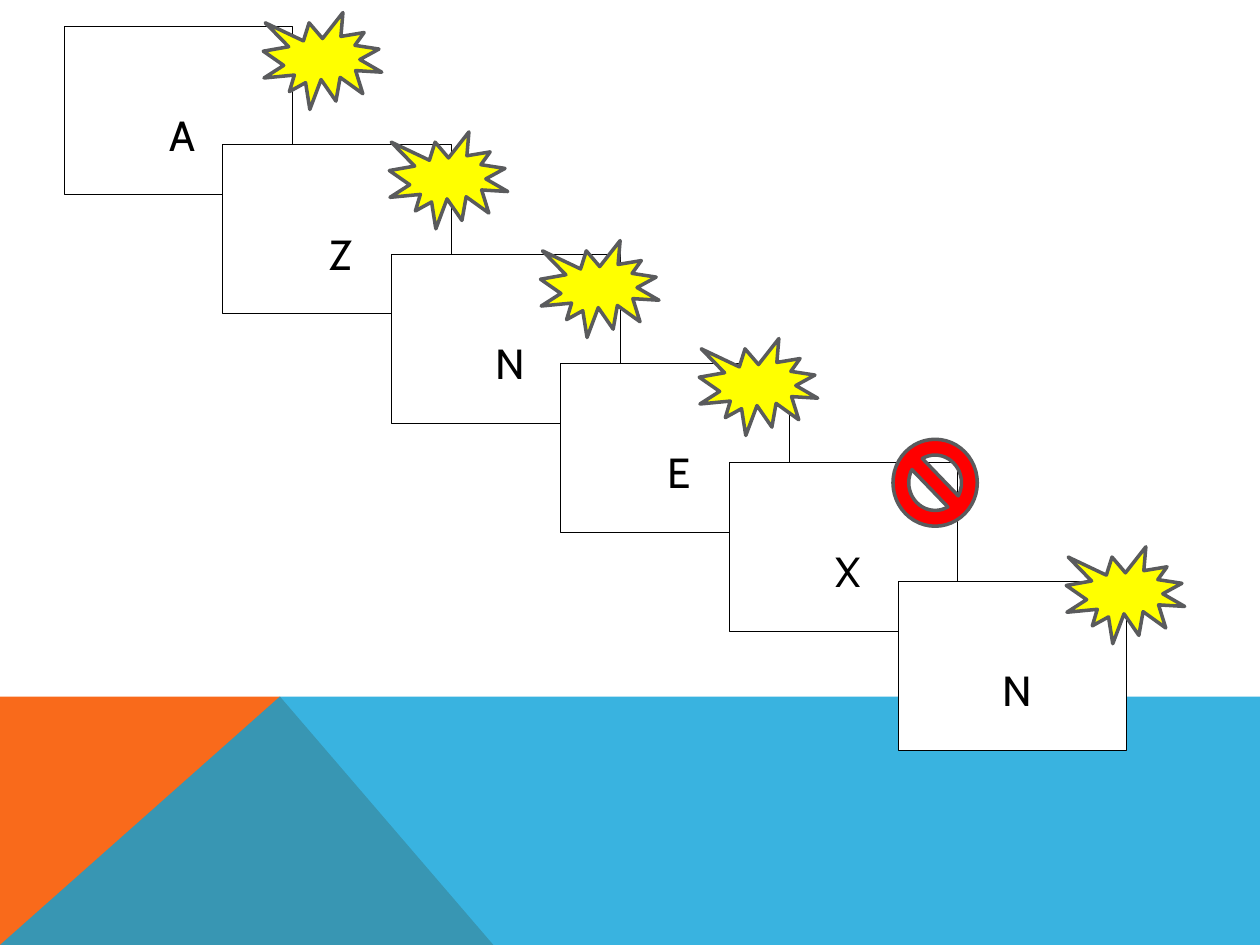
from dataclasses import dataclass

from lxml import etree
from pptx import Presentation
from pptx.dml.color import RGBColor
from pptx.enum.shapes import MSO_SHAPE
from pptx.enum.text import MSO_ANCHOR, PP_ALIGN
from pptx.oxml.ns import qn
from pptx.util import Pt

RECT = MSO_SHAPE.RECTANGLE
BURST = MSO_SHAPE.EXPLOSION1
NO_SIGN = MSO_SHAPE.NO_SYMBOL
TOP = MSO_ANCHOR.TOP
CENTER = PP_ALIGN.CENTER

SLIDE_W, SLIDE_H = 720, 540
BAND_TOP, PEAK_X, SLOPE_X = 397.5, 160.5, 281.5
CARD_SIZE = (130.5, 96.5)
BURST_SIZE = (67.7, 55.4)
NO_SIGN_SIZE = (48.2, 49.7)
CARD_FIRST_X, CARD_SECOND_X, CARD_STEP = 36.7, 127.4, 96.5

# letter, card top, badge shape, badge left, badge top
TRIALS = [
    ("A", 14.9, BURST, 150.5, 7.2),
    ("Z", 82.8, BURST, 222.5, 75.4),
    ("N", 145.3, BURST, 308.9, 137.5),
    ("E", 207.6, BURST, 399.6, 193.5),
    ("X", 264.2, NO_SIGN, 510.3, 251),
    ("N", 332.5, BURST, 609.3, 312.5),
]


@dataclass(frozen=True)
class Theme:
    font: str = "Cabin"
    letter_size: int = 24
    text: str = "000000"
    card: str = "FFFFFF"
    card_line: str = "000000"
    burst: str = "FFFF00"
    no_sign: str = "FF0000"
    badge_line: str = "5A5B5D"
    orange: str = "F96A1B"
    blue: str = "08A1D9"


class Deck:
    def __init__(self, slide, theme):
        self.slide = slide
        self.theme = theme

    def paint(self, sp, fill, line=None, width=0, alpha=100):
        """Set fill, opacity in percent, and outline."""
        sp.shadow.inherit = False
        sp.fill.solid()
        sp.fill.fore_color.rgb = RGBColor.from_string(fill)
        if alpha < 100:
            clr = sp.fill._xPr.find(qn("a:solidFill"))[0]
            etree.SubElement(clr, qn("a:alpha"), val=str(alpha * 1000))
        if line:
            sp.line.color.rgb = RGBColor.from_string(line)
            sp.line.width = Pt(width)
        else:
            sp.line.fill.background()

    def polygon(self, points, fill, alpha=100):
        builder = self.slide.shapes.build_freeform(*points[0], scale=Pt(1))
        builder.add_line_segments(points[1:], close=True)
        self.paint(builder.convert_to_shape(), fill, alpha=alpha)

    def shape(self, kind, x, y, size, fill, line, width):
        sp = self.slide.shapes.add_shape(kind, Pt(x), Pt(y), *map(Pt, size))
        self.paint(sp, fill, line, width)
        return sp

    def card(self, x, y, letter):
        t = self.theme
        tf = self.shape(RECT, x, y, CARD_SIZE, t.card, t.card_line, 0.5).text_frame
        frame_format = {
            "word_wrap": True,
            "vertical_anchor": TOP,
            "margin_left": Pt(5),
            "margin_top": Pt(47.5),
            "margin_right": 0,
            "margin_bottom": 0,
        }
        for name, value in frame_format.items():
            setattr(tf, name, value)
        p = tf.paragraphs[0]
        p.alignment = CENTER
        r = p.add_run()
        r.text = letter
        for name, value in {"name": t.font, "size": Pt(t.letter_size)}.items():
            setattr(r.font, name, value)
        r.font.color.rgb = RGBColor.from_string(t.text)

    def badge(self, kind, x, y):
        t = self.theme
        size, fill = {
            BURST: (BURST_SIZE, t.burst),
            NO_SIGN: (NO_SIGN_SIZE, t.no_sign),
        }[kind]
        self.shape(kind, x, y, size, fill, t.badge_line, 2)


def main():
    prs = Presentation()
    prs.slide_width, prs.slide_height = Pt(SLIDE_W), Pt(SLIDE_H)
    theme = Theme()
    deck = Deck(prs.slides.add_slide(prs.slide_layouts[6]), theme)

    peak = (PEAK_X, BAND_TOP)
    deck.polygon([(0, SLIDE_H), (0, BAND_TOP), peak, (SLOPE_X, SLIDE_H)], theme.orange)
    deck.polygon(
        [(0, SLIDE_H), peak, (SLIDE_W, BAND_TOP), (SLIDE_W, SLIDE_H)],
        theme.blue,
        alpha=80,
    )

    for i, (letter, top, *_) in enumerate(TRIALS):
        x = CARD_SECOND_X + (i - 1) * CARD_STEP if i else CARD_FIRST_X
        deck.card(x, top, letter)
    for _, _, kind, x, y in TRIALS:
        deck.badge(kind, x, y)

    prs.save("out.pptx")


if __name__ == "__main__":
    main()
